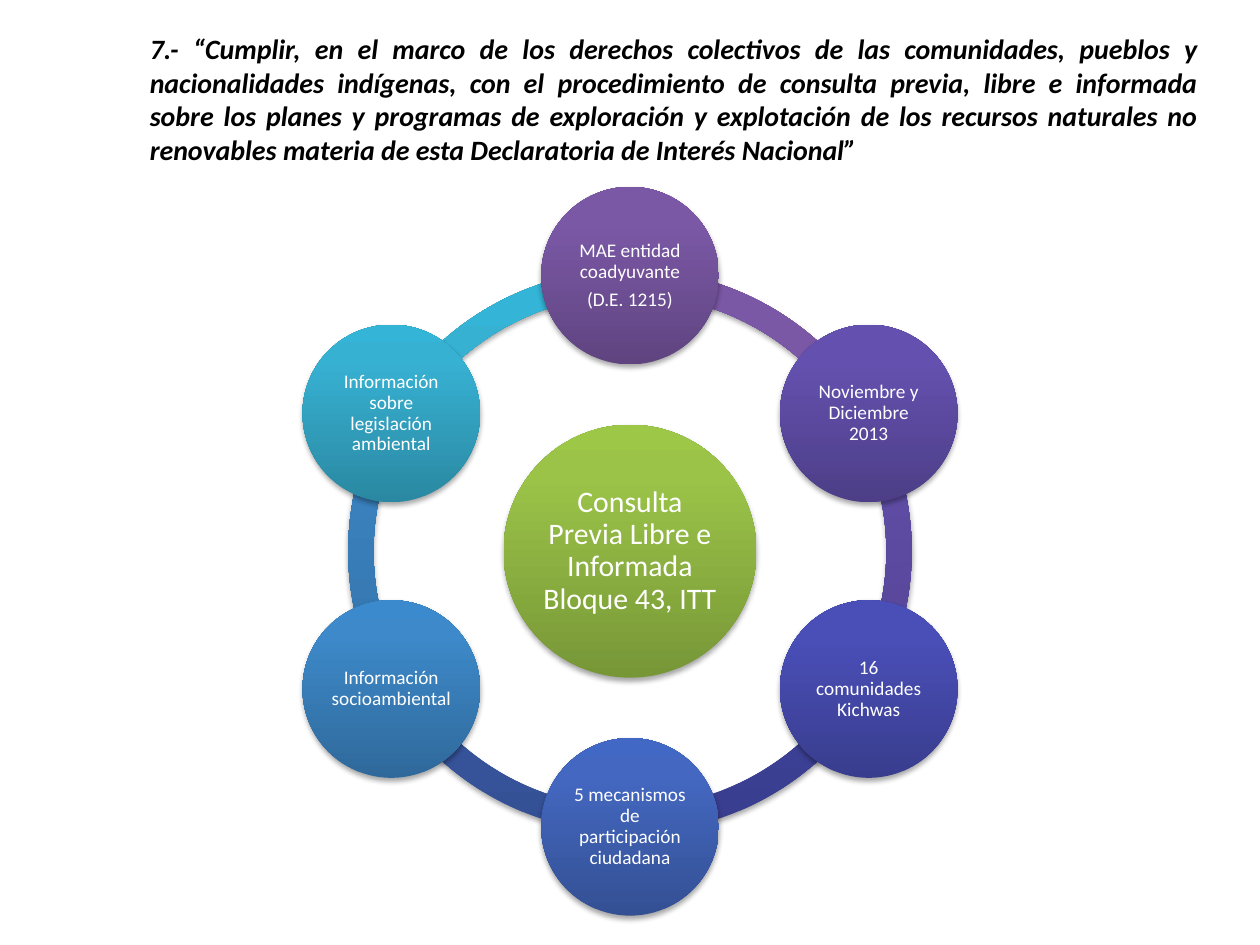
from copy import deepcopy
from math import cos, radians, sin, sqrt

from lxml.etree import SubElement
from pptx import Presentation
from pptx.dml.color import RGBColor
from pptx.enum.shapes import MSO_SHAPE
from pptx.enum.text import MSO_ANCHOR, PP_ALIGN
from pptx.oxml.ns import qn
from pptx.util import Pt

HEADING = (
    "7.- “Cumplir, en el marco de los derechos colectivos de las comunidades, "
    "pueblos y nacionalidades indígenas, con el procedimiento de consulta previa, "
    "libre e informada sobre los planes y programas de exploración y explotación "
    "de los recursos naturales no renovables materia de esta Declaratoria de "
    "Interés Nacional”"
)
HUB = ("Consulta Previa Libre e Informada Bloque 43, ITT", ("779737", "9BC348", "9DC746"))
TOPICS = [
    ("MAE entidad coadyuvante\n(D.E. 1215)", ("5F4480", "7B58A6", "7C57A8")),
    ("Noviembre y Diciembre 2013", ("4D3E87", "6451AF", "6450B2")),
    ("16 comunidades Kichwas", ("393D8E", "4A4FB8", "484EBB")),
    ("5 mecanismos de participación ciudadana", ("345094", "4468C1", "4168C4")),
    ("Información socioambiental", ("2F699B", "3D89C9", "3B8ACD")),
    ("Información sobre legislación ambiental", ("2A88A2", "37B1D2", "34B4D6")),
]
HUB_SIZE, TOPIC_SIZE, RING_SIZE = 144.5, 101.5, 322
STEP = 360 / len(TOPICS)


def color(hex_code):
    """Turn a hex string into a colour."""
    return RGBColor.from_string(hex_code)


def write(frame, text, size, ink="FFFFFF", align=PP_ALIGN.CENTER, bold=False,
          italic=False, spacing=None, after=None):
    """Fill a text frame, one paragraph for each line of text."""
    frame.word_wrap = True
    frame.vertical_anchor = MSO_ANCHOR.MIDDLE
    for index, line in enumerate(text.split("\n")):
        paragraph = frame.paragraphs[0] if index == 0 else frame.add_paragraph()
        paragraph.alignment = align
        paragraph.line_spacing = spacing
        paragraph.space_after = after
        run = paragraph.add_run()
        run.text = line
        run.font.name = "Calibri"
        run.font.size = Pt(size)
        run.font.bold = bold
        run.font.italic = italic
        run.font.color.rgb = color(ink)


def shade(shape, tones):
    """Give a shape a three-tone upward gradient and a soft shadow."""
    shape.line.fill.background()
    shape.fill.gradient()
    shape.fill.gradient_angle = 90
    stop_list = shape._element.spPr.find(f".//{qn('a:gsLst')}")
    stop_list.append(deepcopy(stop_list[-1]))
    for stop, tone, position in zip(shape.fill.gradient_stops, tones, (0, 0.8, 1)):
        stop.color.rgb = color(tone)
        stop.position = position
    shape.shadow.inherit = False
    effects = shape._element.spPr.find(qn("a:effectLst"))
    shadow = SubElement(effects, qn("a:outerShdw"), blurRad=str(Pt(3.1)),
                        dist=str(Pt(1.8)), dir="5400000", rotWithShape="0")
    black = SubElement(shadow, qn("a:srgbClr"), val="000000")
    SubElement(black, qn("a:alpha"), val="35000")


def add_centered(slide, kind, x, y, size, tones):
    """Add a shaded square-boxed shape around a centre point."""
    shape = slide.shapes.add_shape(
        kind, Pt(x - size / 2), Pt(y - size / 2), Pt(size), Pt(size))
    shade(shape, tones)
    return shape


def add_disc(slide, x, y, size, text, tones, text_size):
    """Add a labelled circle around a centre point."""
    frame = add_centered(slide, MSO_SHAPE.OVAL, x, y, size, tones).text_frame
    frame.margin_left = frame.margin_right = Pt(1.4)
    frame.margin_top = frame.margin_bottom = Pt(1.4)
    write(frame, text, text_size, spacing=0.9, after=Pt(0.35 * text_size))


def add_heading(slide, left, top, width, height):
    """Place the quoted commitment in its box."""
    heading = slide.shapes.add_textbox(Pt(left), Pt(top), Pt(width), Pt(height))
    write(heading.text_frame, HEADING, 16, ink="000000", align=PP_ALIGN.JUSTIFY,
          bold=True, italic=True)


def add_wheel(slide, left, top, side):
    """Place the ring, the hub and the surrounding topics in a square box."""
    x, y = left + side / 2, top + side / 2
    orbit = (side - TOPIC_SIZE) / 2
    angles = [270 + STEP * index for index in range(len(TOPICS))]
    for angle, (_, tones) in reversed(list(zip(angles, TOPICS))):
        arc = add_centered(slide, MSO_SHAPE.BLOCK_ARC, x, y, RING_SIZE, tones)
        arc.adjustments[0] = angle % 360 * 0.6
        arc.adjustments[1] = (angle + STEP) % 360 * 0.6
        arc.adjustments[2] = 0.045
    add_disc(slide, x, y, HUB_SIZE, *HUB, 17)
    for angle, (text, tones) in zip(angles, TOPICS):
        turn = radians(angle)
        add_disc(slide, x + orbit * cos(turn), y + orbit * sin(turn),
                 TOPIC_SIZE, text, tones, 11)


def main():
    """Build and save the slide."""
    deck = Presentation()
    deck.slide_width, deck.slide_height = Pt(720), Pt(540)
    slide = deck.slides.add_slide(deck.slide_layouts[6])
    add_heading(slide, 78.5, 11.5, 613.5, 90)
    add_wheel(slide, 151.75, 106.75, 416.5)
    deck.save("out.pptx")


if __name__ == "__main__":
    main()
